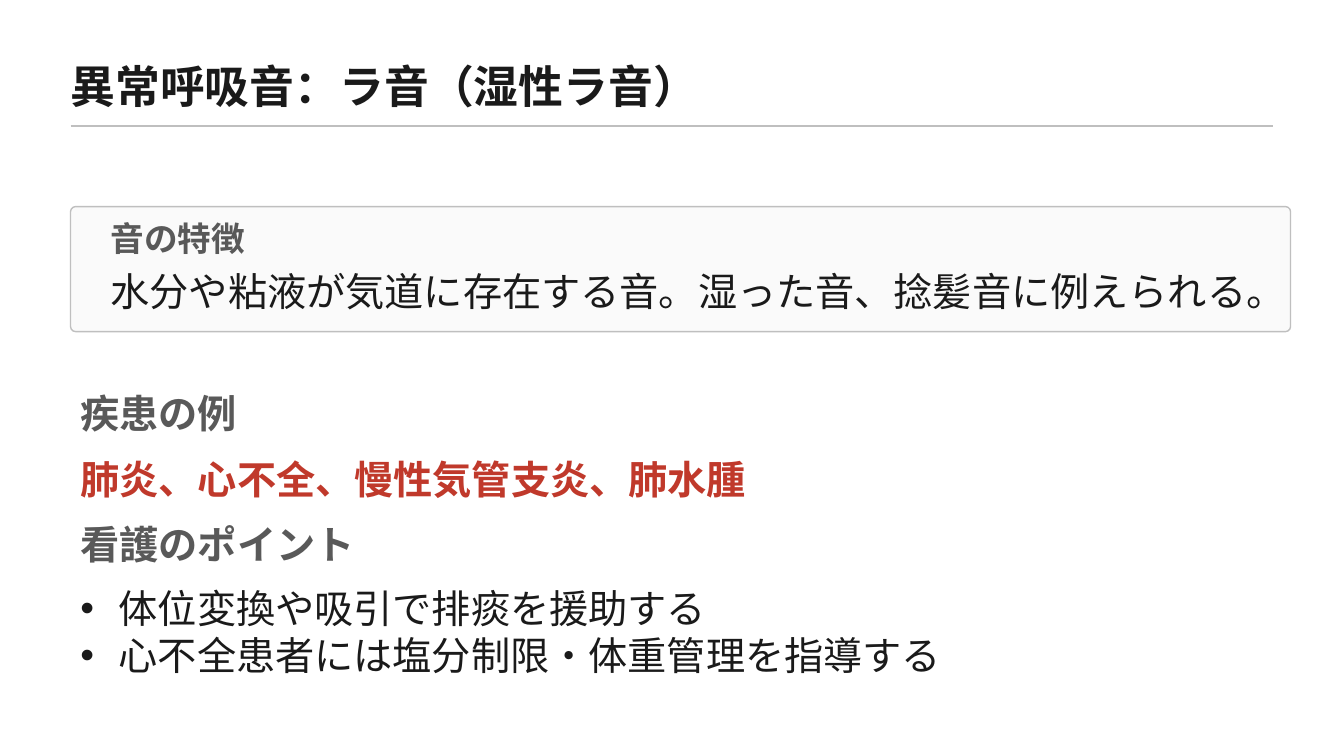
from lxml import etree
from pptx import Presentation
from pptx.dml.color import RGBColor
from pptx.enum.shapes import MSO_CONNECTOR, MSO_SHAPE
from pptx.enum.text import MSO_ANCHOR
from pptx.oxml.ns import qn
from pptx.util import Inches, Pt

INK = RGBColor(0x1A, 0x1A, 0x1A)
GRAY = RGBColor(0x59, 0x59, 0x59)
RED = RGBColor(0xC0, 0x39, 0x2B)
RULE = RGBColor(0xBF, 0xBF, 0xBF)
PANEL = RGBColor(0xFA, 0xFA, 0xFA)
WHITE = RGBColor(0xFF, 0xFF, 0xFF)
FONT = "Arial"
LEFT = 0.7
CONTENT_WIDTH = 11.93
BULLET_INDENT = 0.38


def add_bullet(paragraph):
    properties = paragraph._p.get_or_add_pPr()
    properties.set("marL", str(Inches(BULLET_INDENT)))
    properties.set("indent", str(-Inches(BULLET_INDENT)))
    etree.SubElement(properties, qn("a:buFont")).set("typeface", FONT)
    etree.SubElement(properties, qn("a:buChar")).set("char", "•")


def add_text(slide, box, lines, size=28, color=INK, bold=False,
             anchor=MSO_ANCHOR.MIDDLE, bulleted=False):
    shape = slide.shapes.add_textbox(*map(Inches, box))
    frame = shape.text_frame
    frame.word_wrap = True
    frame.vertical_anchor = anchor
    for index, line in enumerate(lines):
        paragraph = frame.add_paragraph() if index else frame.paragraphs[0]
        if bulleted:
            add_bullet(paragraph)
        run = paragraph.add_run()
        run.text = line
        run.font.name = FONT
        run.font.size = Pt(size)
        run.font.bold = bold
        run.font.color.rgb = color
    return frame


def add_title(slide, box, title):
    left, top, width, height = box
    frame = add_text(slide, box, [title], size=32, bold=True)
    frame.margin_left = frame.margin_right = 0
    frame.margin_top = frame.margin_bottom = 0
    bottom = Inches(top + height)
    underline = slide.shapes.add_connector(
        MSO_CONNECTOR.STRAIGHT, Inches(left), bottom, Inches(left + width), bottom)
    underline.line.color.rgb = RULE
    underline.line.width = Pt(1)
    etree.SubElement(underline._element.spPr, qn("a:effectLst"))


def add_feature_panel(slide, box, heading, description):
    left, top, width, height = box
    panel = slide.shapes.add_shape(MSO_SHAPE.ROUNDED_RECTANGLE, *map(Inches, box))
    panel.adjustments[0] = 0.04
    panel.shadow.inherit = False
    panel.fill.solid()
    panel.fill.fore_color.rgb = PANEL
    panel.line.color.rgb = RULE
    panel.line.width = Pt(1)
    add_text(slide, (left + 0.3, top + 0.15, 2.5, 0.33), [heading],
             size=24, color=GRAY, bold=True)
    add_text(slide, (left + 0.3, top + 0.55, width - 0.1, 0.7), [description],
             anchor=MSO_ANCHOR.TOP)


def add_section(slide, box, heading, lines, **style):
    left, top, width, height = box
    add_text(slide, (left, top, 3, 0.4), [heading], color=GRAY, bold=True)
    add_text(slide, (left, top + 0.55, width, height - 0.55), lines, **style)


def main():
    presentation = Presentation()
    presentation.slide_width = Inches(13.33)
    presentation.slide_height = Inches(7.5)
    slide = presentation.slides.add_slide(presentation.slide_layouts[6])
    slide.background.fill.solid()
    slide.background.fill.fore_color.rgb = WHITE

    add_title(slide, (LEFT, 0.45, CONTENT_WIDTH, 0.8), "異常呼吸音：ラ音（湿性ラ音）")
    add_feature_panel(slide, (LEFT, 2.05, 12.1, 1.24), "音の特徴",
                      "水分や粘液が気道に存在する音。湿った音、捻髪音に例えられる。")
    add_section(slide, (LEFT, 3.9, CONTENT_WIDTH, 1.15), "疾患の例",
                ["肺炎、心不全、慢性気管支炎、肺水腫"], color=RED, bold=True)
    add_section(slide, (LEFT, 5.2, CONTENT_WIDTH, 1.67), "看護のポイント",
                ["体位変換や吸引で排痰を援助する",
                 "心不全患者には塩分制限・体重管理を指導する"],
                anchor=MSO_ANCHOR.TOP, bulleted=True)
    presentation.save("out.pptx")


if __name__ == "__main__":
    main()
